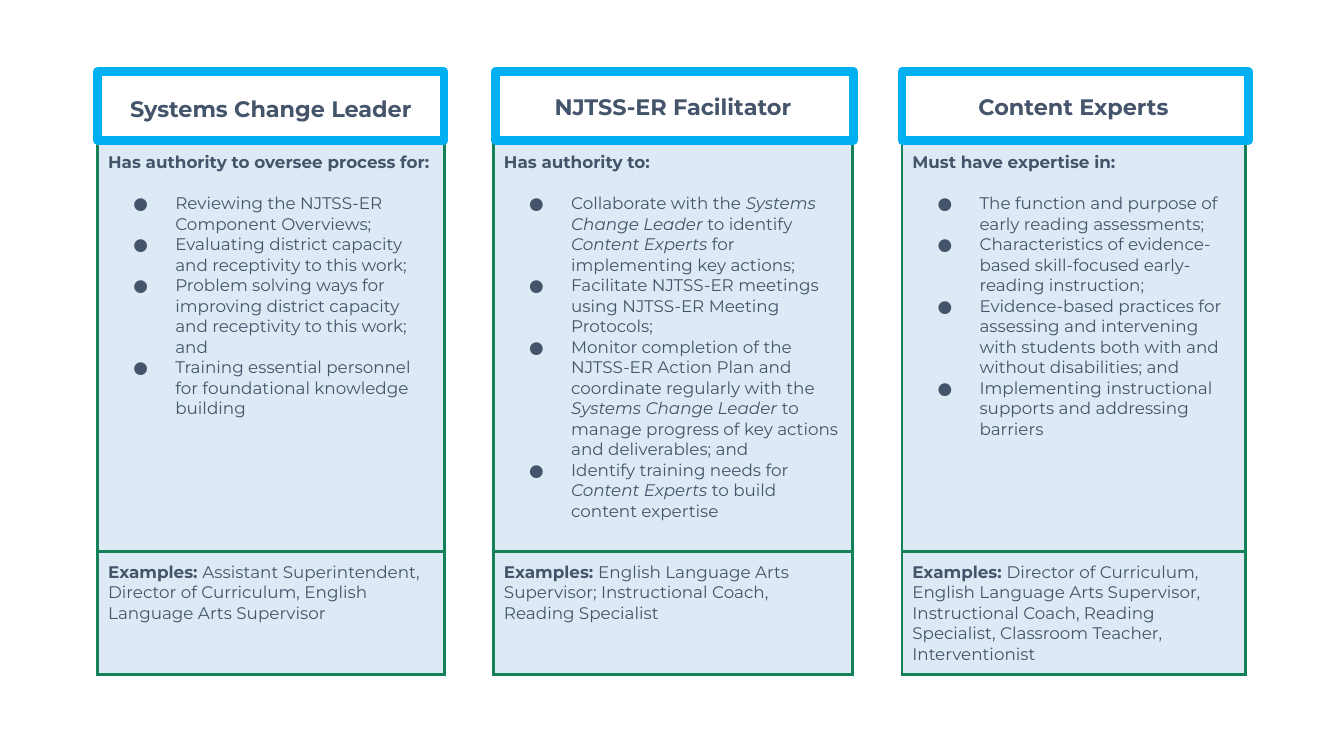
from lxml.etree import SubElement
from pptx import Presentation
from pptx.dml.color import RGBColor
from pptx.enum.shapes import MSO_SHAPE
from pptx.enum.text import MSO_ANCHOR, PP_ALIGN
from pptx.oxml import parse_xml
from pptx.oxml.ns import nsdecls, qn
from pptx.util import Pt

PX = 9525
FONT = "Montserrat"
SLATE = RGBColor(0x44, 0x54, 0x6A)
PALE_BLUE = RGBColor(0xDD, 0xEA, 0xF6)
GREEN = RGBColor(0x15, 0x81, 0x58)
SKY = RGBColor(0x00, 0xB0, 0xF0)

LEFT, TOP = 93, 69
COL_WIDTHS = [330, 47, 342, 47, 327]
ROW_HEIGHTS = [66, 390, 117]
FRAMES = [(93, 330), (472, 341), (859, 330)]

# Asterisks enclose italic words.
ROLES = [
    ("Systems Change Leader", "Has authority to oversee process for:", [
        "Reviewing the NJTSS-ER Component Overviews;",
        "Evaluating district capacity and receptivity to this work;",
        "Problem solving ways for improving district capacity and receptivity to this work; and",
        "Training essential personnel for foundational knowledge building",
    ], "Assistant Superintendent, Director of Curriculum, English Language Arts Supervisor"),
    ("NJTSS-ER Facilitator", "Has authority to:", [
        "Collaborate with the *Systems Change Leader* to identify *Content Experts* "
        "for implementing key actions;",
        "Facilitate NJTSS-ER meetings using NJTSS-ER Meeting Protocols;",
        "Monitor completion of the NJTSS-ER Action Plan and coordinate regularly with the "
        "*Systems Change Leader* to manage progress of key actions and deliverables; and",
        "Identify training needs for *Content Experts* to build content expertise",
    ], "English Language Arts Supervisor; Instructional Coach, Reading Specialist"),
    ("Content Experts", "Must have expertise in:", [
        "The function and purpose of early reading assessments;",
        "Characteristics of evidence-based skill-focused early-reading instruction;",
        "Evidence-based practices for assessing and intervening with students "
        "both with and without disabilities; and",
        "Implementing instructional supports and addressing barriers",
    ], "Director of Curriculum, English Language Arts Supervisor, Instructional Coach, "
       "Reading Specialist, Classroom Teacher, Interventionist"),
]


def add_run(p, text, size=12, bold=False, italic=False):
    r = p.add_run()
    r.text = text
    r.font.color.rgb = SLATE
    for name, value in dict(name=FONT, size=Pt(size), bold=bold, italic=italic).items():
        setattr(r.font, name, value)


def set_borders(cell, green_sides):
    """Draw the sides named in green_sides (from LRTB) and hide the others."""
    tcPr = cell._tc.get_or_add_tcPr()
    for i, side in enumerate("LRTB"):
        paint = "<a:noFill/>"
        if side in green_sides:
            paint = f'<a:solidFill><a:srgbClr val="{GREEN}"/></a:solidFill>'
        tcPr.insert(i, parse_xml(
            f'<a:ln{side} {nsdecls("a")} w="{Pt(2.25)}">{paint}</a:ln{side}>'))


prs = Presentation()
prs.slide_width, prs.slide_height = 1280 * PX, 720 * PX
s = prs.slides.add_slide(prs.slide_layouts[6])

table = s.shapes.add_table(
    len(ROW_HEIGHTS), len(COL_WIDTHS), LEFT * PX, TOP * PX,
    sum(COL_WIDTHS) * PX, sum(ROW_HEIGHTS) * PX).table
table.first_row = table.horz_banding = False
for column, width in zip(table.columns, COL_WIDTHS):
    column.width = width * PX
for row, height in zip(table.rows, ROW_HEIGHTS):
    row.height = height * PX

for r in range(len(ROW_HEIGHTS)):
    for c in range(len(COL_WIDTHS)):
        cell = table.cell(r, c)
        is_gap = c % 2 == 1
        if is_gap or r == 0:
            cell.fill.background()
        else:
            cell.fill.solid()
            cell.fill.fore_color.rgb = PALE_BLUE
        set_borders(cell, "LR" if is_gap else "LRTB")
        for side in ("left", "right", "top", "bottom"):
            setattr(cell, f"margin_{side}", 10 * PX)

for i, (title, lead, duties, examples) in enumerate(ROLES):
    head, body, foot = [table.cell(r, 2 * i) for r in range(3)]

    head.vertical_anchor = MSO_ANCHOR.MIDDLE
    p = head.text_frame.paragraphs[0]
    p.alignment = PP_ALIGN.CENTER
    if i == 0:
        p.line_spacing, p.space_before, p.space_after = 1.15, Pt(7), Pt(3)
    add_run(p, title, size=16, bold=True)

    p = body.text_frame.paragraphs[0]
    p.space_after = Pt(14.6)
    add_run(p, lead, bold=True)
    for duty in duties:
        p = body.text_frame.add_paragraph()
        pPr = p._p.get_or_add_pPr()
        pPr.set("marL", str(64 * PX))
        pPr.set("indent", str(-40 * PX))
        SubElement(SubElement(pPr, qn("a:buClr")), qn("a:srgbClr")).set("val", str(SLATE))
        SubElement(pPr, qn("a:buFont")).set("typeface", FONT)
        SubElement(pPr, qn("a:buChar")).set("char", "●")
        for k, part in enumerate(duty.split("*")):
            add_run(p, part, italic=k % 2 == 1)

    p = foot.text_frame.paragraphs[0]
    add_run(p, "Examples: ", bold=True)
    add_run(p, examples)

for left, width in FRAMES:
    frame = s.shapes.add_shape(MSO_SHAPE.RECTANGLE, left * PX, 68 * PX, width * PX, 66 * PX)
    frame.shadow.inherit = False
    frame.fill.background()
    frame.line.color.rgb = SKY
    frame.line.width = Pt(6)

prs.save("out.pptx")
